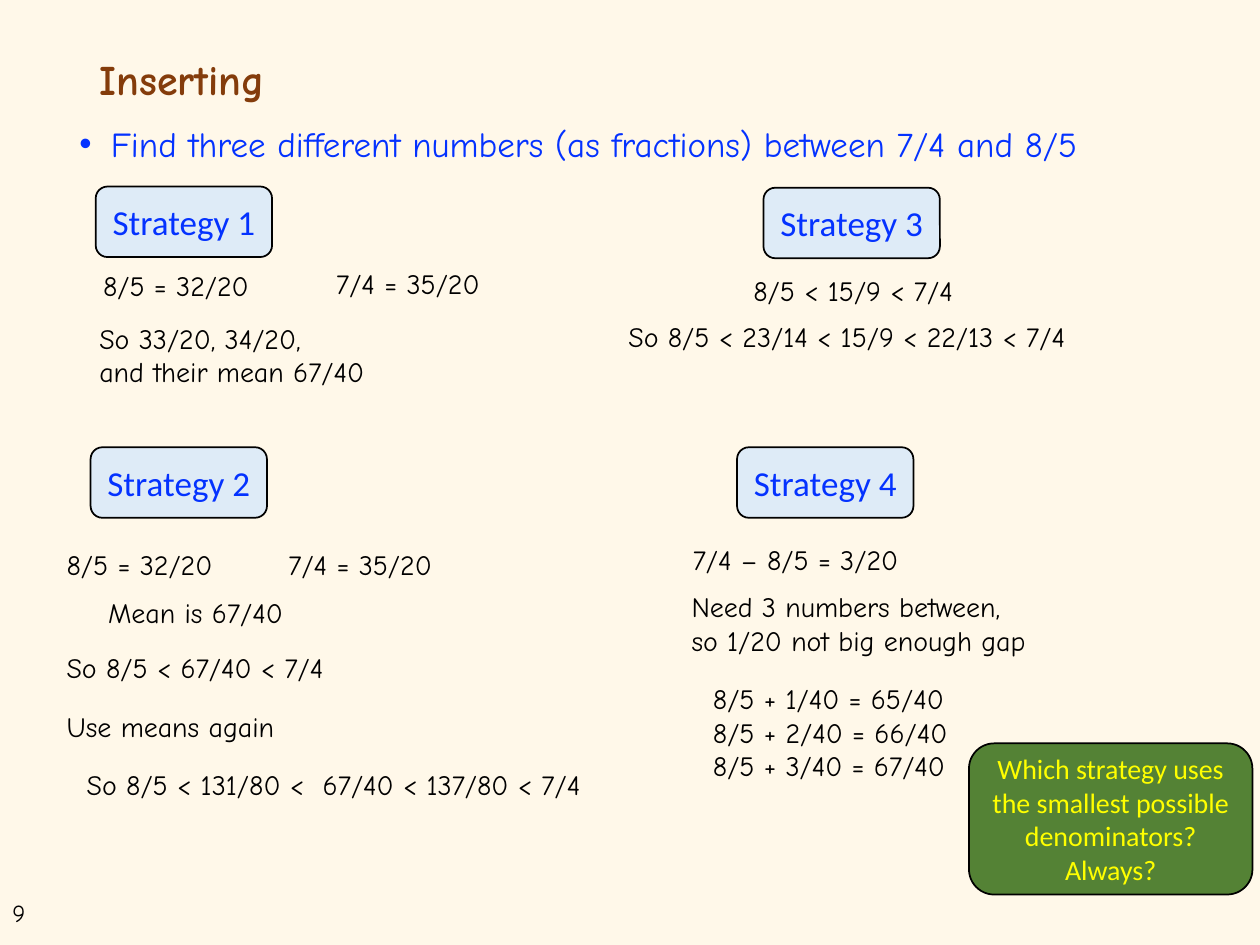
from lxml import etree
from pptx import Presentation
from pptx.dml.color import RGBColor
from pptx.enum.shapes import MSO_SHAPE
from pptx.enum.text import MSO_ANCHOR, MSO_AUTO_SIZE, PP_ALIGN
from pptx.oxml.ns import qn
from pptx.util import Pt

COLORS = {
    "background": "FFF8E9", "title": "843C0B", "blue": "0432FF", "black": "000000",
    "label": "DEEBF7", "green": "548235", "yellow": "FFFF00",
}
HAND, SANS = "Comic Neue", "Calibri"

# Content: positions and sizes in points
TITLE = "Inserting"
TASK = "Find three different numbers (as fractions) between 7/4 and 8/5"
PAGE_NUMBER = "9"
QUESTION = ["Which strategy uses the smallest possible denominators?", "Always?"]

# Each strategy: label, its left and top, then workings as (left, top, width, paragraphs)
STRATEGIES = [
    ("Strategy 1", 54.7, 106.6, [
        (51.8, 149.8, 101, ["8/5 = 32/20"]),
        (185, 149, 99, ["7/4 = 35/20"]),
        (49.7, 180, 172, ["So 33/20, 34/20,\nand their mean 67/40"]),
    ]),
    ("Strategy 2", 51.8, 255.6, [
        (31, 309.6, 101, ["8/5 = 32/20"]),
        (157.7, 309.6, 99, ["7/4 = 35/20"]),
        (54.7, 337, 117, ["Mean is 67/40"]),
        (31, 368, 169, ["So 8/5 < 67/40 < 7/4"]),
        (31, 401.8, 135, ["Use means again"]),
        (42.5, 434.9, 307, ["So 8/5 < 131/80 <  67/40 < 137/80 < 7/4"]),
    ]),
    ("Strategy 3", 436.3, 107.3, [
        (423.4, 152.6, 130, ["8/5 < 15/9 < 7/4"]),
        (352, 179.3, 273, ["So 8/5 < 23/14 < 15/9 < 22/13 < 7/4"]),
    ]),
    ("Strategy 4", 421.2, 255.6, [
        (388.8, 306.7, 142, ["7/4 – 8/5 = 3/20"]),
        (388.1, 333.4, 213, ["Need 3 numbers between,\nso 1/20 not big enough gap"]),
        (400.3, 385.9, 162,
         [f"8/5 + {step}/40 = {64 + step}/40" for step in (1, 2, 3)]),
    ]),
]
LABEL_WIDTH, LABEL_HEIGHT = 100.8, 40.3


def rgb(name):
    return RGBColor.from_string(COLORS[name])


def write(frame, paragraphs, size, color, font=HAND, bold=False, align=PP_ALIGN.LEFT):
    for index, text in enumerate(paragraphs):
        paragraph = frame.paragraphs[0] if index == 0 else frame.add_paragraph()
        paragraph.alignment = align
        for number, line in enumerate(text.split("\n")):
            if number:
                paragraph.add_line_break()
            run = paragraph.add_run()
            run.text = line
            run.font.size = Pt(size)
            run.font.name = font
            run.font.bold = bold
            run.font.color.rgb = rgb(color)


def add_text(slide, left, top, width, height, paragraphs, size, color, wrap=False):
    box = slide.shapes.add_textbox(Pt(left), Pt(top), Pt(width), Pt(height))
    box.text_frame.word_wrap = wrap
    write(box.text_frame, paragraphs, size, color)
    return box.text_frame


def add_card(slide, left, top, width, height, paragraphs, size, fill, color):
    card = slide.shapes.add_shape(
        MSO_SHAPE.ROUNDED_RECTANGLE, Pt(left), Pt(top), Pt(width), Pt(height))
    card.shadow.inherit = False
    card.fill.solid()
    card.fill.fore_color.rgb = rgb(fill)
    card.line.color.rgb = rgb("black")
    card.line.width = Pt(1)
    card.text_frame.word_wrap = True
    card.text_frame.vertical_anchor = MSO_ANCHOR.MIDDLE
    write(card.text_frame, paragraphs, size, color, SANS, align=PP_ALIGN.CENTER)


def add_bullet(paragraph, indent):
    properties = paragraph._p.get_or_add_pPr()
    properties.set("marL", str(Pt(indent)))
    properties.set("indent", str(-Pt(indent)))
    etree.SubElement(properties, qn("a:buFont"), typeface="Arial")
    etree.SubElement(properties, qn("a:buChar"), char="•")


def main():
    deck = Presentation()
    deck.slide_width, deck.slide_height = Pt(720), Pt(540)
    slide = deck.slides.add_slide(deck.slide_layouts[5])
    slide.background.fill.solid()
    slide.background.fill.fore_color.rgb = rgb("background")

    # Title
    title = slide.shapes.title
    title.left, title.top, title.width, title.height = Pt(49.7), Pt(28.8), Pt(620.6), Pt(36)
    title.text_frame.auto_size = MSO_AUTO_SIZE.NONE
    title.text_frame.vertical_anchor = MSO_ANCHOR.MIDDLE
    write(title.text_frame, [TITLE], 24, "title", bold=True)
    title.text_frame.paragraphs[0].line_spacing = 0.9

    # Task and page number
    task = add_text(slide, 38.2, 69.1, 644.4, 36, [TASK], 20, "blue", wrap=True)
    task.paragraphs[0].line_spacing = 0.9
    add_bullet(task.paragraphs[0], 18)
    add_text(slide, 0, 509.8, 38.2, 24.5, [PAGE_NUMBER], 14, "black", wrap=True)

    # Strategies
    for label, left, top, workings in STRATEGIES:
        add_card(slide, left, top, LABEL_WIDTH, LABEL_HEIGHT, [label], 20, "label", "blue")
        for text_left, text_top, width, paragraphs in workings:
            lines = sum(text.count("\n") + 1 for text in paragraphs)
            add_text(slide, text_left, text_top, width, 7.2 + 19.4 * lines,
                     paragraphs, 16, "black")

    # Closing question
    add_card(slide, 553.7, 424.8, 162, 86.4, QUESTION, 16, "green", "yellow")

    deck.save("out.pptx")


if __name__ == "__main__":
    main()
